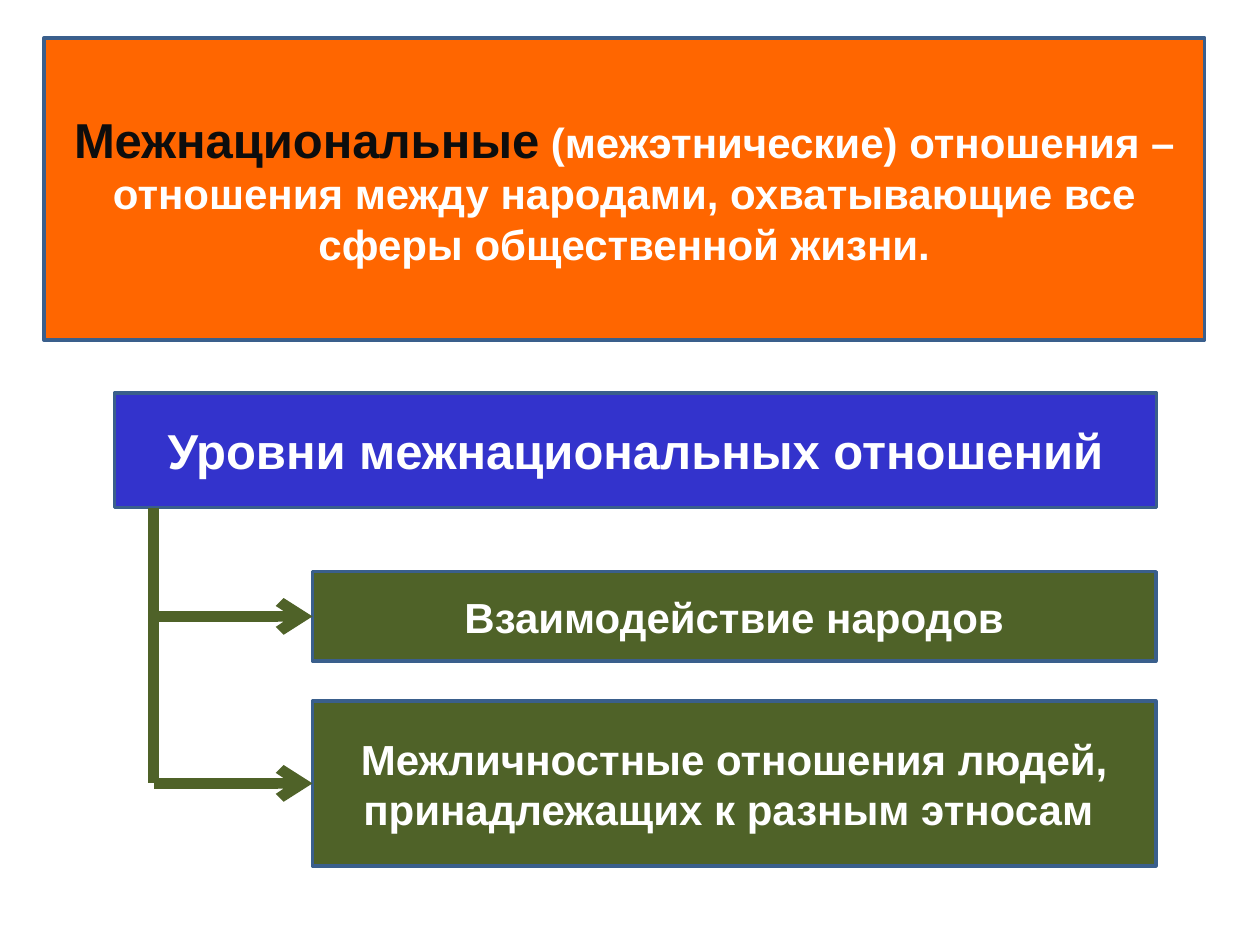
"""Build a slide that defines interethnic relations and shows their two levels."""
from dataclasses import dataclass

from pptx import Presentation
from pptx import util as u
from pptx.dml.color import RGBColor
from pptx.enum import shapes, text
from pptx.oxml.ns import qn
from lxml import etree


@dataclass(frozen=True)
class Theme:
    font: str = "Arial"
    big: int = 28
    mid: int = 24
    edge: float = 2
    thick: float = 6
    orange: str = "FF6600"
    blue: str = "3333CC"
    green: str = "4F6228"
    rim: str = "3A5F8C"
    dark: str = "0D0D0D"
    white: str = "FFFFFF"


def write(para, words, *, font, size, color, bold=True):
    run = para.add_run()
    run.text = words
    run.font.name = font
    run.font.size = u.Pt(size)
    run.font.bold = bold
    run.font.color.rgb = RGBColor.from_string(color)


class Canvas:
    def __init__(self, slide, theme):
        self.slide = slide
        self.theme = theme

    def box(self, left, top, width, height, fill, *runs):
        area = [u.Pt(n) for n in (left, top, width, height)]
        box = self.slide.shapes.add_shape(shapes.MSO_SHAPE.RECTANGLE, *area)
        box.shadow.inherit = False
        box.fill.solid()
        box.fill.fore_color.rgb = RGBColor.from_string(fill)
        box.line.color.rgb = RGBColor.from_string(self.theme.rim)
        box.line.width = u.Pt(self.theme.edge)
        frame = box.text_frame
        frame.word_wrap = True
        frame.vertical_anchor = text.MSO_ANCHOR.MIDDLE
        para = frame.paragraphs[0]
        para.alignment = text.PP_ALIGN.CENTER
        for words, size, color in runs:
            write(para, words, font=self.theme.font, size=size, color=color)
        return box

    def line(self, start, end, goal=None):
        ends = [u.Pt(n) for n in (*start, *end)]
        line = self.slide.shapes.add_connector(shapes.MSO_CONNECTOR.STRAIGHT, *ends)
        line.line.color.rgb = RGBColor.from_string(self.theme.green)
        line.line.width = u.Pt(self.theme.thick)
        props = line._element.spPr
        etree.SubElement(props, qn("a:effectLst"))
        if goal is not None:
            line.end_connect(goal, 1)
            etree.SubElement(props.find(qn("a:ln")), qn("a:tailEnd"), type="arrow")


def main():
    deck = Presentation()
    deck.slide_width, deck.slide_height = u.Pt(720), u.Pt(540)
    look = Theme()
    page = Canvas(deck.slides.add_slide(deck.slide_layouts[6]), look)

    page.box(25.2, 21.6, 663.1, 172.8, look.orange,
             ("Межнациональные", look.big, look.dark),
             (" (межэтнические) отношения – отношения между народами, "
              "охватывающие все сферы общественной жизни.", look.mid, look.white))
    page.box(65.5, 224.6, 595.4, 65.5, look.blue,
             ("Уровни межнациональных отношений", look.big, look.white))

    left, width, trunk = 178.6, 481.9, 87.8
    levels = [
        (326.7, 51.1, "Взаимодействие народов"),
        (400.5, 94.3, "Межличностные отношения людей, принадлежащих к разным этносам "),
    ]
    for top, height, words in levels:
        goal = page.box(left, top, width, height, look.green,
                        (words, look.mid, look.white))
        middle = top + height / 2
        page.line((trunk, middle), (left, middle), goal)
    page.line((trunk, 290.1), (trunk, middle))

    deck.save("out.pptx")


if __name__ == "__main__":
    main()
